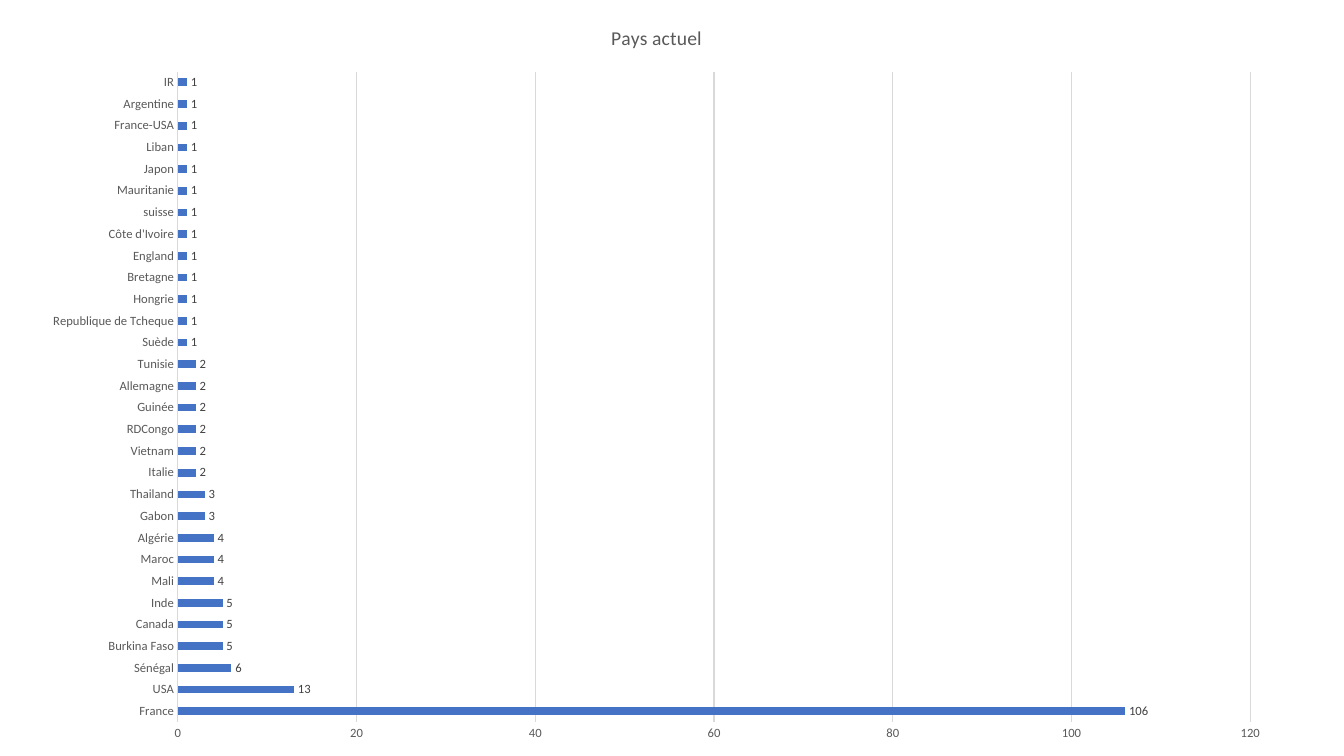
import pptx
import pptx.chart.data
import pptx.dml.color
import pptx.enum.chart
import pptx.util

PX = 914400 / 100.8
FONT = "Calibri"
COLORS = {"bar": "4472C4", "grid": "D9D9D9", "text": "595959", "label": "404040", "base": "000000"}
COUNTRIES_BY_COUNT = {
    106: ["France"],
    13: ["USA"],
    6: ["Sénégal"],
    5: ["Burkina Faso", "Canada", "Inde"],
    4: ["Mali", "Maroc", "Algérie"],
    3: ["Gabon", "Thailand"],
    2: ["Italie", "Vietnam", "RDCongo", "Guinée", "Allemagne", "Tunisie"],
    1: ["Suède", "Republique de Tcheque", "Hongrie", "Bretagne", "England",
        "Côte d'Ivoire", "suisse", "Mauritanie", "Japon", "Liban",
        "France-USA", "Argentine", "IR"],
}


def px(length):
    return pptx.util.Emu(round(length * PX))


def color(name):
    return pptx.dml.color.RGBColor.from_string(COLORS[name])


def style_font(font, size, name):
    font.name = FONT
    font.size = pptx.util.Pt(size)
    font.bold = False
    font.color.rgb = color(name)


def style_line(line):
    line.color.rgb = color("grid")
    line.width = pptx.util.Pt(0.75)


def style_axis(axis):
    axis.major_tick_mark = pptx.enum.chart.XL_TICK_MARK.NONE
    axis.minor_tick_mark = pptx.enum.chart.XL_TICK_MARK.NONE
    style_font(axis.tick_labels.font, 9, "text")


def add_title(chart, text):
    chart.has_title = True
    chart.chart_title.include_in_layout = False
    span = chart.chart_title.text_frame.paragraphs[0].add_run()
    span.text = text
    style_font(span.font, 14, "text")


def style_bars(plot):
    plot.gap_width = 182
    plot.vary_by_categories = False
    series = plot.series[0]
    series.format.fill.solid()
    series.format.fill.fore_color.rgb = color("bar")
    series.invert_if_negative = False
    labels = series.data_labels
    labels.show_value = True
    labels.position = pptx.enum.chart.XL_LABEL_POSITION.OUTSIDE_END
    style_font(labels.font, 9, "label")


def add_country_chart(page):
    data = pptx.chart.data.CategoryChartData()
    data.categories = [country for group in COUNTRIES_BY_COUNT.values() for country in group]
    data.add_series("Series 1", [count for count, group in COUNTRIES_BY_COUNT.items() for _ in group])
    chart = page.shapes.add_chart(
        pptx.enum.chart.XL_CHART_TYPE.BAR_CLUSTERED, px(28), px(0), px(1257), px(756), data
    ).chart
    style_font(chart.font, 10, "base")
    chart.has_legend = False
    add_title(chart, "Pays actuel")
    style_bars(chart.plots[0])
    style_axis(chart.category_axis)
    style_line(chart.category_axis.format.line)
    style_axis(chart.value_axis)
    chart.value_axis.format.line.fill.background()
    chart.value_axis.has_major_gridlines = True
    style_line(chart.value_axis.major_gridlines.format.line)


def main():
    deck = pptx.Presentation()
    deck.slide_width = px(1344)
    deck.slide_height = px(756)
    page = deck.slides.add_slide(deck.slide_layouts[6])
    add_country_chart(page)
    deck.save("out.pptx")


if __name__ == "__main__":
    main()
